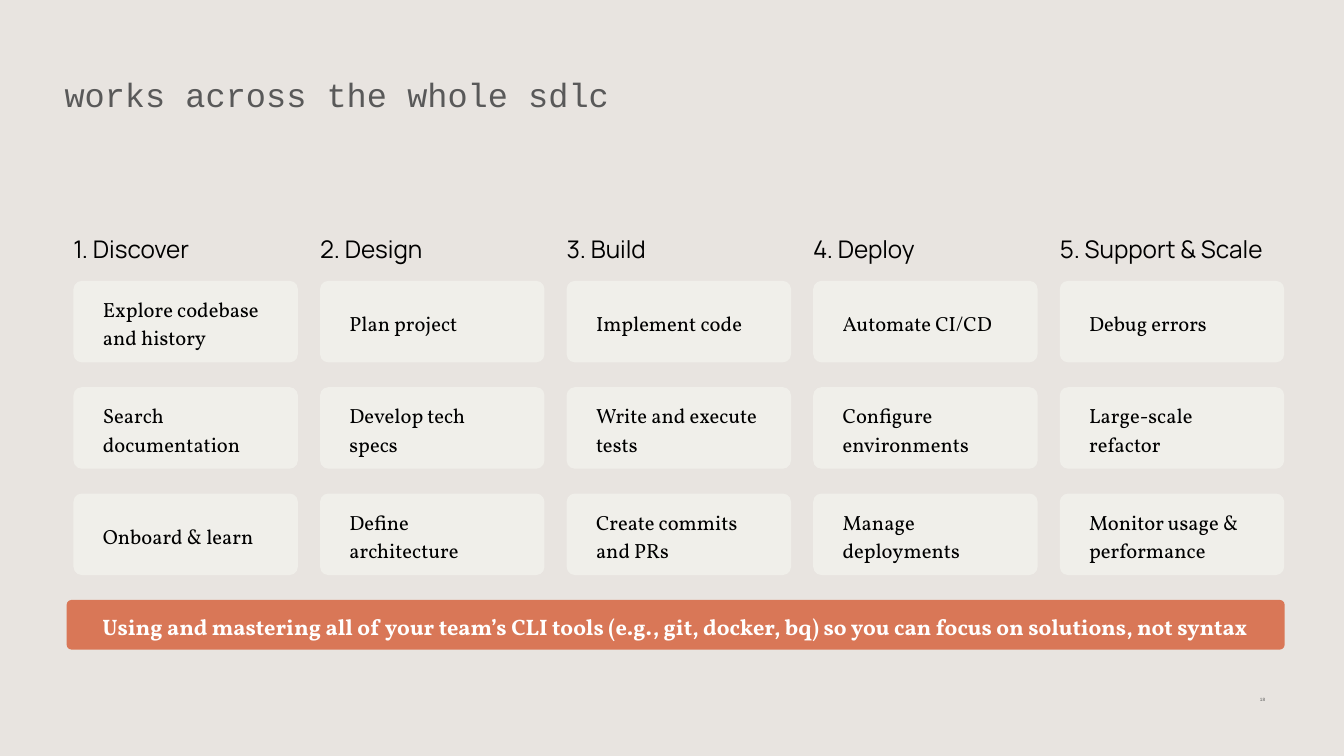
from pptx import Presentation
from pptx.dml.color import RGBColor
from pptx.enum.shapes import MSO_SHAPE
from pptx.enum.text import MSO_ANCHOR, MSO_AUTO_SIZE, PP_ALIGN
from pptx.util import Cm, Pt

COLORS = {
    "background": "E8E4E0",
    "card": "F0EFEA",
    "accent": "D97757",
    "text": "000000",
    "muted": "595959",
    "white": "FFFFFF",
}

PHASES = [
    ("1. Discover",
     ["Explore codebase and history", "Search documentation", "Onboard & learn"]),
    ("2. Design",
     ["Plan project", "Develop tech specs", "Define architecture"]),
    ("3. Build",
     ["Implement code", "Write and execute tests", "Create commits and PRs"]),
    ("4. Deploy",
     ["Automate CI/CD", "Configure environments", "Manage deployments"]),
    ("5. Support & Scale",
     ["Debug errors", "Large-scale refactor", "Monitor usage & performance"]),
]
BANNER = ("Using and mastering all of your team’s CLI tools "
          "(e.g., git, docker, bq) so you can focus on solutions, not syntax")

# Card grid, in centimetres
LEFT, COL_STEP, CARD_W = 1.39, 4.66, 4.24
TOP, ROW_STEP, CARD_H = 5.31, 2.01, 1.54
HEADING_TOP, HEADING_H = 4.34, 0.56


def rgb(name):
    return RGBColor.from_string(COLORS[name])


def set_text(sp, text, font, size, color, inset=(0.25, 0.25), bold=False,
             align=PP_ALIGN.LEFT, anchor=MSO_ANCHOR.TOP, spacing=1.15):
    tf = sp.text_frame
    tf.word_wrap = True
    tf.vertical_anchor = anchor
    tf.margin_left = tf.margin_right = Cm(inset[0])
    tf.margin_top = tf.margin_bottom = Cm(inset[1])
    p = tf.paragraphs[0]
    p.text = text
    p.alignment = align
    p.line_spacing = spacing
    p.font.name = font
    p.font.size = Pt(size)
    p.font.bold = bold
    p.font.color.rgb = rgb(color)
    return p


def add_text(s, x, y, w, h, text, font, size, color, **options):
    sp = s.shapes.add_textbox(Cm(x), Cm(y), Cm(w), Cm(h))
    set_text(sp, text, font, size, color, **options)
    return sp


def add_heading(s, x, w, text):
    sp = add_text(s, x, HEADING_TOP, w, HEADING_H, text, "Manrope", 13, "text",
                  inset=(0, 0))
    sp.text_frame.auto_size = MSO_AUTO_SIZE.SHAPE_TO_FIT_TEXT
    sp.text_frame.paragraphs[0].space_after = Pt(10)


def add_card(s, x, y, w, h, text, fill="card", size=11, color="text", **options):
    sp = s.shapes.add_shape(MSO_SHAPE.ROUNDED_RECTANGLE, Cm(x), Cm(y), Cm(w), Cm(h))
    sp.adjustments[0] = 0.1
    sp.shadow.inherit = False
    sp.fill.solid()
    sp.fill.fore_color.rgb = rgb(fill)
    sp.line.fill.background()
    set_text(sp, text, "Vollkorn", size, color, inset=(0.51, 0.25),
             anchor=MSO_ANCHOR.MIDDLE, **options)


def main():
    prs = Presentation()
    prs.slide_width, prs.slide_height = Cm(25.4), Cm(14.29)
    s = prs.slides.add_slide(prs.slide_layouts[6])
    s.background.fill.solid()
    s.background.fill.fore_color.rgb = rgb("background")

    # Title
    title = add_text(s, 0.97, 1.14, 22.66, 1.27, "works across the whole sdlc",
                     "Courier New", 18, "muted", spacing=1.0)
    title.text_frame.auto_size = MSO_AUTO_SIZE.SHAPE_TO_FIT_TEXT

    # Phase columns: a heading above three cards
    for col, (phase, tasks) in enumerate(PHASES):
        x = LEFT + col * COL_STEP
        is_last = col == len(PHASES) - 1
        add_heading(s, x, 4.39 if is_last else CARD_W, phase)
        for row, task in enumerate(tasks):
            add_card(s, x, TOP + row * ROW_STEP, CARD_W, CARD_H, task)

    # Banner
    add_card(s, 1.26, 11.34, 23.02, 0.94, BANNER, fill="accent", size=12,
             color="white", bold=True, align=PP_ALIGN.CENTER)

    # Slide number
    add_text(s, 22.94, 13.08, 1.22, 0.3, "18", "Arial", 2.5, "muted",
             align=PP_ALIGN.RIGHT, anchor=MSO_ANCHOR.MIDDLE, spacing=0.8)

    prs.save("out.pptx")


if __name__ == "__main__":
    main()
